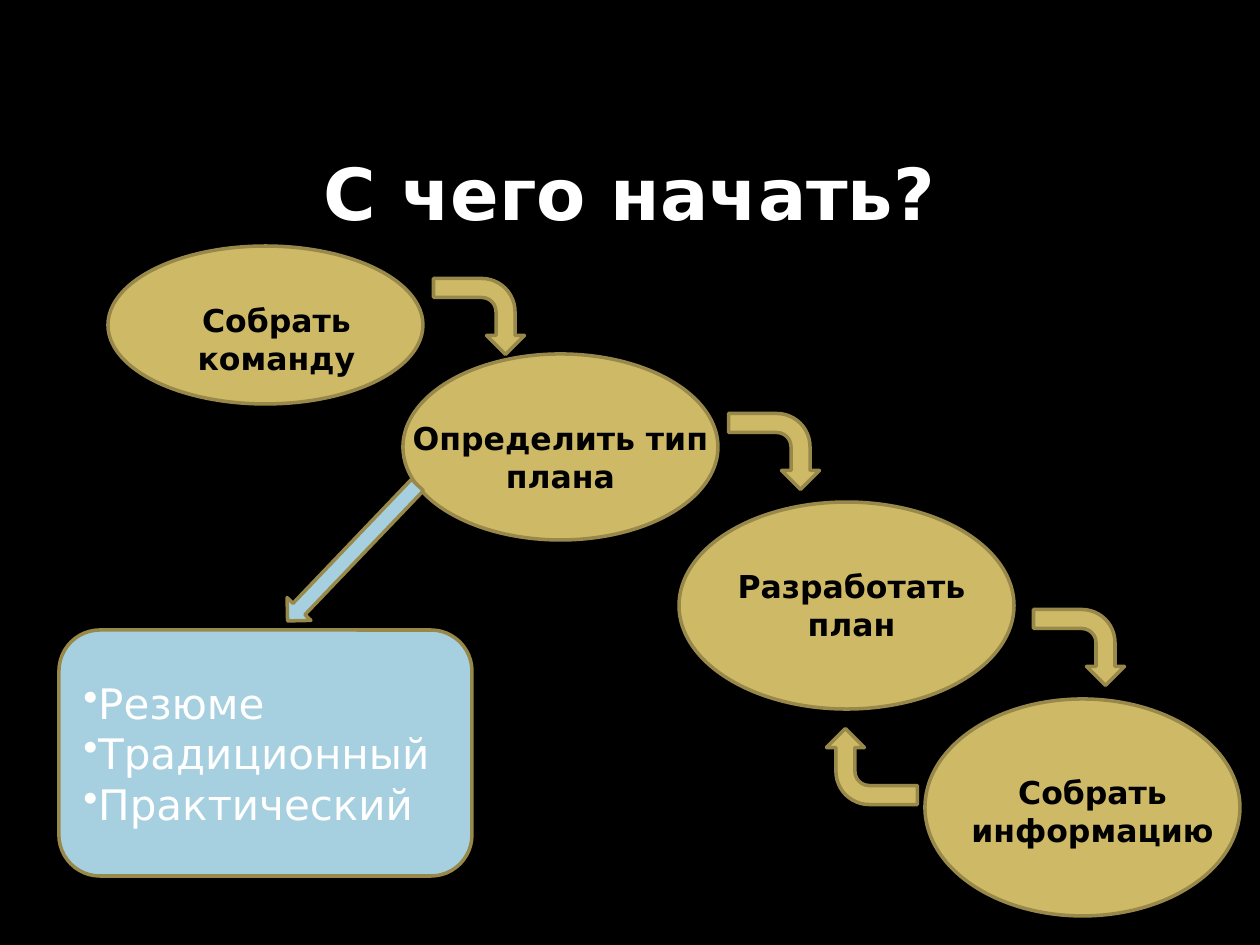
from lxml import etree
from pptx import Presentation
from pptx import util as u
from pptx.dml.color import RGBColor
from pptx.enum import shapes, text
from pptx.oxml import ns

PX_PER_INCH = 126
FONT = "DejaVu Sans"
COLORS = {
    "back": "000000",
    "gold": "CEB966",
    "edge": "98894B",
    "blue": "A6D0DF",
    "light": "FFFFFF",
    "dark": "000000",
}
STEPS = [
    ("Собрать команду", (108, 246, 315, 158), (158, 295, 237, 89)),
    ("Определить тип плана", (403, 354, 315, 186), (393, 413, 335, 89)),
    ("Разработать план", (679, 502, 335, 207), (699, 561, 305, 89)),
    ("Собрать информацию", (925, 699, 315, 217), (925, 767, 335, 89)),
]
BENDS = [(441, 271, 90), (736, 406, 90), (1041, 602, 90), (834, 721, 270)]
PLAN_TYPES = ["Резюме", "Традиционный", "Практический"]


def px(length):
    """Turn pixels into EMU."""
    return u.Inches(length / PX_PER_INCH)


def color(name):
    """Look up a named colour."""
    return RGBColor.from_string(COLORS[name])


def write(para, words, size=18, ink="dark", bold=False, align="CENTER", bullet=None):
    """Put formatted words, with an optional bullet, into a paragraph."""
    para.alignment = getattr(text.PP_ALIGN, align)
    span = para.add_run()
    span.text = words
    span.font.name = FONT
    span.font.size = u.Pt(size)
    span.font.bold = bold
    span.font.color.rgb = color(ink)
    if bullet:
        etree.SubElement(para._p.get_or_add_pPr(), ns.qn("a:buChar")).set("char", bullet)


def add_title(page, words):
    """Place and fill the title placeholder."""
    box = page.shapes.title
    box.left, box.top, box.width, box.height = map(px, (63, 108, 1134, 168))
    frame = box.text_frame
    frame.auto_size = text.MSO_AUTO_SIZE.NONE
    frame.vertical_anchor = text.MSO_ANCHOR.MIDDLE
    write(frame.paragraphs[0], words, size=41, ink="light", bold=True)


def add_figure(page, kind, place, fill="gold", turn=0):
    """Draw an outlined preset shape."""
    figure = page.shapes.add_shape(getattr(shapes.MSO_SHAPE, kind), *map(px, place))
    figure.shadow.inherit = False
    figure.fill.solid()
    figure.fill.fore_color.rgb = color(fill)
    figure.line.color.rgb = color("edge")
    figure.line.width = u.Pt(2)
    figure.rotation = turn
    return figure


def add_caption(page, words, place):
    """Add a wrapped, centred bold caption."""
    frame = page.shapes.add_textbox(*map(px, place)).text_frame
    frame.word_wrap = True
    frame.auto_size = text.MSO_AUTO_SIZE.SHAPE_TO_FIT_TEXT
    write(frame.paragraphs[0], words, bold=True)


def add_list_card(page, items, place):
    """Add a rounded card holding a bulleted list."""
    frame = add_figure(page, "ROUNDED_RECTANGLE", place, fill="blue").text_frame
    frame.vertical_anchor = text.MSO_ANCHOR.MIDDLE
    for index, item in enumerate(items):
        para = frame.add_paragraph() if index else frame.paragraphs[0]
        write(para, item, size=24, ink="light", align="LEFT", bullet="•")


def main():
    """Build the planning steps slide."""
    deck = Presentation()
    deck.slide_width, deck.slide_height = px(1260), px(945)
    page = deck.slides.add_slide(deck.slide_layouts[5])
    page.background.fill.solid()
    page.background.fill.fore_color.rgb = color("back")

    add_title(page, "С чего начать?")
    for _, oval, _ in STEPS:
        add_figure(page, "OVAL", oval)
    for words, _, place in reversed(STEPS):
        add_caption(page, words, place)
    for left, top, turn in BENDS:
        add_figure(page, "BENT_ARROW", (left, top, 76, 91), turn=turn)
    add_list_card(page, PLAN_TYPES, (59, 630, 413, 246))
    add_figure(page, "DOWN_ARROW", (336, 459, 33, 188), fill="blue", turn=43.7)
    deck.save("out.pptx")


if __name__ == "__main__":
    main()
